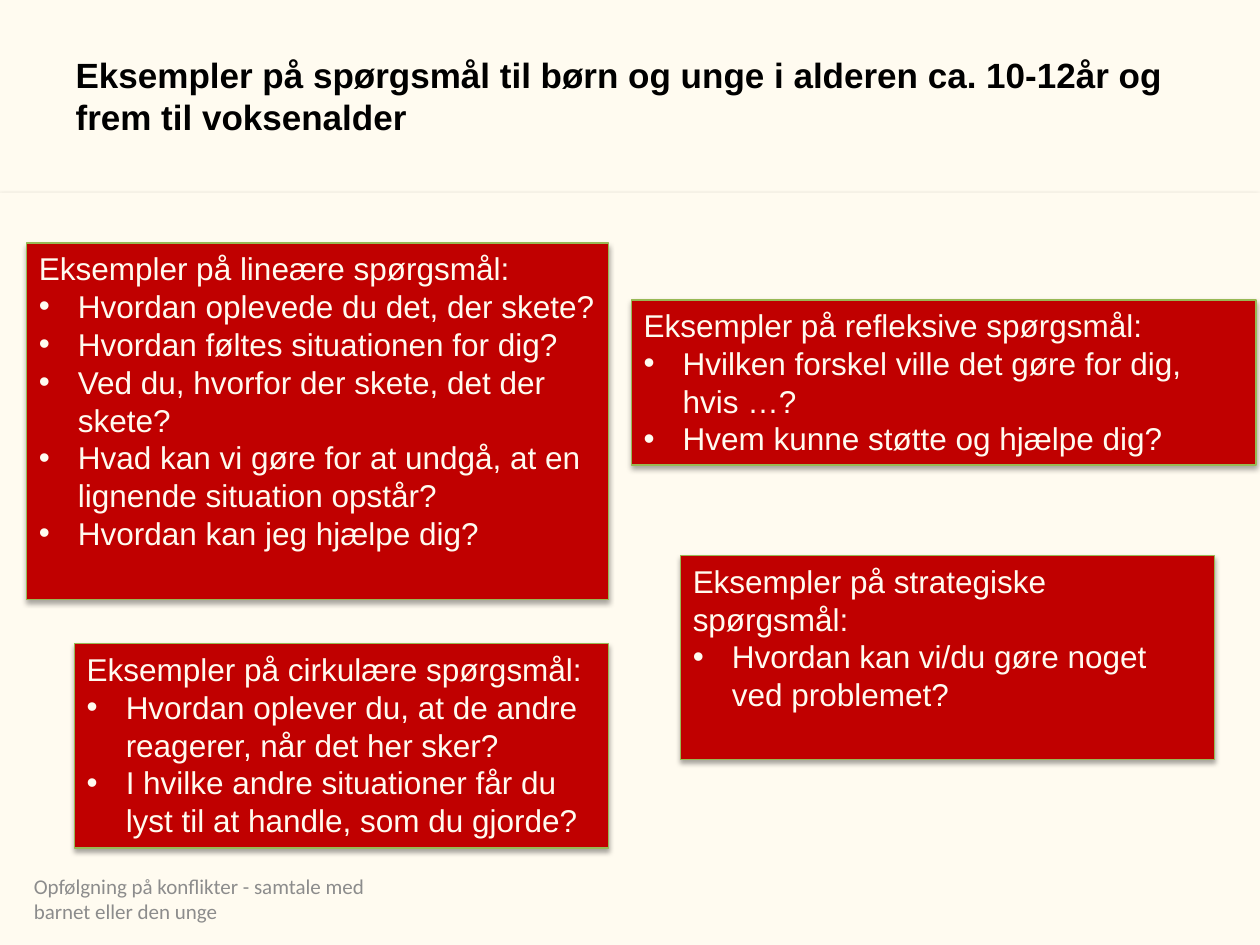
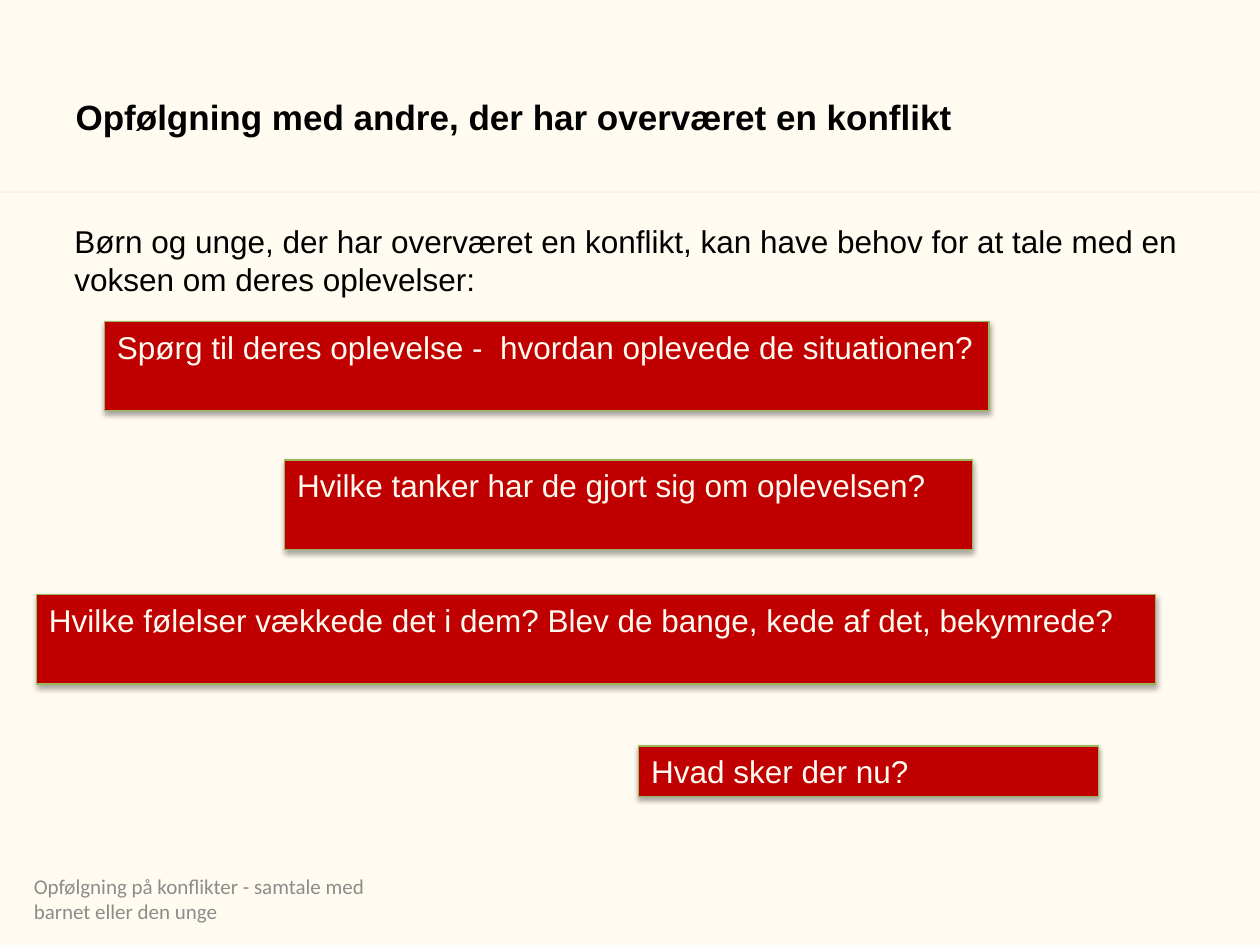
"""Build two slides with example questions for talks after a conflict."""
from lxml import etree
from pptx import Presentation, util as u
from pptx.dml.color import RGBColor
from pptx.enum import shapes, text
from pptx.oxml import ns

PX = 9144
CREAM = RGBColor(0xFF, 0xFB, 0xF0)
RED = RGBColor(0xC0, 0x00, 0x00)
GREEN = RGBColor(0x98, 0xB9, 0x55)
BLACK = RGBColor(0x00, 0x00, 0x00)
GREY = RGBColor(0x8C, 0x8C, 0x8C)
INDENT = 31
LINE = 33
FOOT = "Opfølgning på konflikter - samtale med barnet eller den unge"
INTRO = ("Børn og unge, der har overværet en konflikt, kan have behov for "
         "at tale med en voksen om deres oplevelser:")

DECK = [
    ("Eksempler på spørgsmål til børn og unge i alderen ca. 10-12år og "
     "frem til voksenalder", LINE, None, [
         ((21, 193, 462, 283), "Eksempler på lineære spørgsmål:", [
             "Hvordan oplevede du det, der skete?",
             "Hvordan føltes situationen for dig?",
             "Ved du, hvorfor der skete, det der skete?",
             "Hvad kan vi gøre for at undgå, at en lignende situation opstår?",
             "Hvordan kan jeg hjælpe dig?"]),
         ((59, 511, 424, 162), "Eksempler på cirkulære spørgsmål:", [
             "Hvordan oplever du, at de andre reagerer, når det her sker?",
             "I hvilke andre situationer får du lyst til at handle, "
             "som du gjorde?"]),
         ((501, 238, 496, 131), "Eksempler på refleksive spørgsmål:", [
             "Hvilken forskel ville det gøre for dig, hvis …?",
             "Hvem kunne støtte og hjælpe dig?"]),
         ((540, 441, 424, 162), "Eksempler på strategiske spørgsmål:", [
             "Hvordan kan vi/du gøre noget ved problemet?"])]),
    ("Opfølgning med andre, der har overværet en konflikt", 0, INTRO, [
        ((83, 255, 702, 71),
         "Spørg til deres oplevelse -  hvordan oplevede de situationen?", []),
        ((226, 365, 546, 71),
         "Hvilke tanker har de gjort sig om oplevelsen?", []),
        ((29, 472, 888, 71),
         "Hvilke følelser vækkede det i dem? Blev de bange, kede af det, "
         "bekymrede?", []),
        ((507, 592, 365, 40), "Hvad sker der nu?", [])]),
]


def panel(slide, at, fill):
    box = slide.shapes.add_shape(shapes.MSO_SHAPE.RECTANGLE,
                                 *[n * PX for n in at])
    box.fill.solid()
    box.fill.fore_color.rgb = fill
    box.line.fill.background()
    box.shadow.inherit = False
    glow = box.element.spPr.find(ns.qn("a:effectLst"))
    shade = etree.SubElement(glow, ns.qn("a:outerShdw"), blurRad="39370",
                             dist="22860", dir="5400000", rotWithShape="0")
    tint = etree.SubElement(shade, ns.qn("a:srgbClr"), val="000000")
    etree.SubElement(tint, ns.qn("a:alpha"), val="35000")
    return box


def style(shape, lines, size, color, anchor, font="Arial", bold=False):
    frame = shape.text_frame
    frame.text = "\n".join(lines)
    frame.word_wrap = True
    frame.auto_size = text.MSO_AUTO_SIZE.NONE
    frame.vertical_anchor = anchor
    for par in frame.paragraphs:
        par.alignment = text.PP_ALIGN.LEFT
        for run in par.runs:
            run.font.name = font
            run.font.size = u.Pt(size)
            run.font.bold = bold
            run.font.color.rgb = color
    return frame


TOP, MID = text.MSO_ANCHOR.TOP, text.MSO_ANCHOR.MIDDLE
prs = Presentation()
prs.slide_width, prs.slide_height = 1000 * PX, 750 * PX
master = prs.slide_master
master.background.fill.solid()
master.background.fill.fore_color.rgb = CREAM

for index, (head, lift, intro, boxes) in enumerate(DECK):
    slide = prs.slides.add_slide(prs.slide_layouts[1 if intro else 5])
    if index == 0:
        band = panel(slide, (0, 153, 1000, 597), CREAM)
        master.shapes[0].element.addprevious(band.element)

    title = slide.shapes.title
    title.left, title.top, title.width, title.height = [
        n * PX for n in (50, 30, 900, 125)]
    frame = style(title, [head], 20, BLACK, MID, bold=True)
    frame.margin_bottom = (5 + lift) * PX

    if intro:
        body = slide.placeholders[1]
        body.left, body.top, body.width, body.height = [
            n * PX for n in (49, 171, 902, 503)]
        frame = style(body, [intro], 18, BLACK, TOP)
        props = frame.paragraphs[0]._p.get_or_add_pPr()
        props.set("marL", "0")
        props.set("indent", "0")
        etree.SubElement(props, ns.qn("a:buNone"))

    for at, lead, items in boxes:
        box = panel(slide, at, RED)
        box.line.color.rgb = GREEN
        box.line.width = u.Pt(0.75)
        frame = style(box, [lead] + items, 18, CREAM, TOP)
        for par in frame.paragraphs[1:]:
            props = par._p.get_or_add_pPr()
            props.set("marL", str(INDENT * PX))
            props.set("indent", str(-INDENT * PX))
            etree.SubElement(props, ns.qn("a:buFont"), typeface="Arial")
            etree.SubElement(props, ns.qn("a:buChar"), char="•")

    foot = slide.shapes.add_textbox(*[n * PX for n in (17, 693, 317, 40)])
    style(foot, [FOOT], 12, GREY, MID, font="Calibri")

prs.save("out.pptx")
